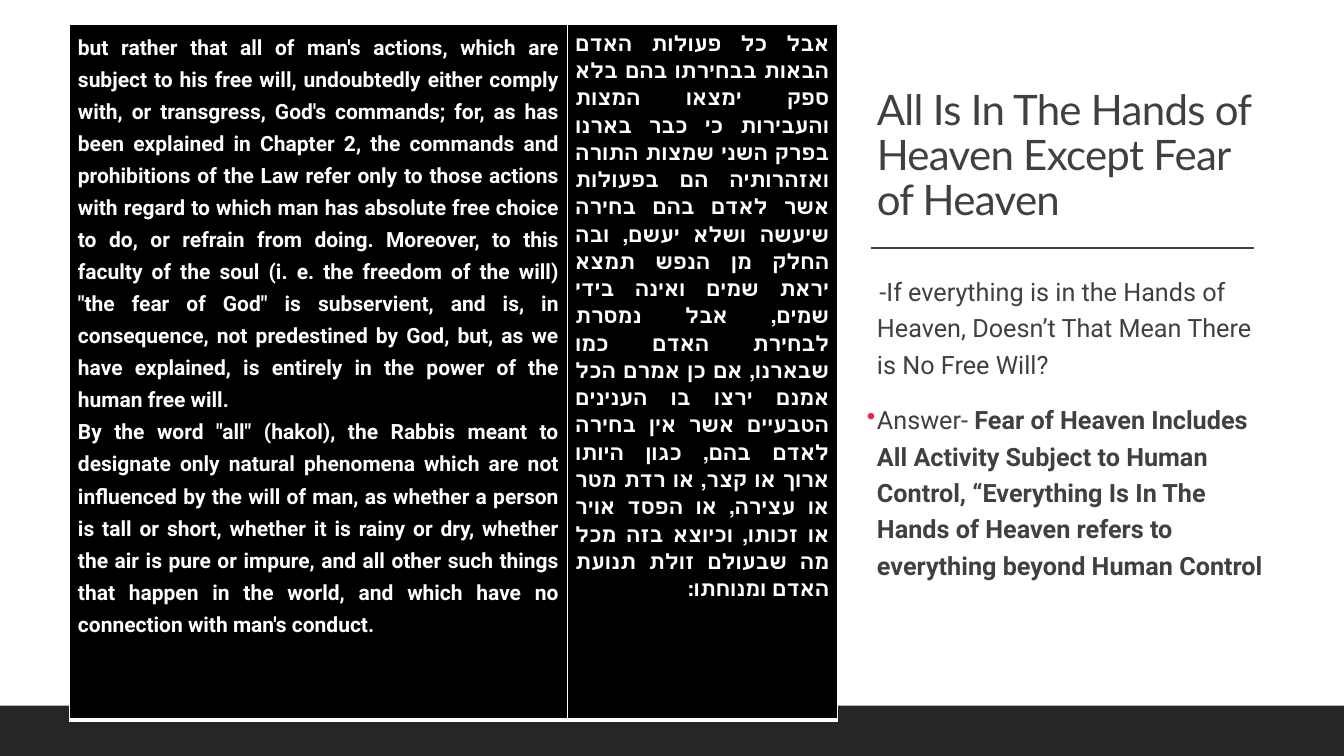
from lxml.etree import SubElement
from pptx import Presentation
from pptx.dml.color import RGBColor
from pptx.enum.shapes import MSO_CONNECTOR, MSO_SHAPE
from pptx.enum.text import MSO_ANCHOR, PP_ALIGN
from pptx.oxml.ns import qn
from pptx.util import Inches, Pt

WIDTH, HEIGHT = Inches(13.33), Inches(7.5)
WHITE, BLACK, GRAY, DARK, RED = "FFFFFF", "000000", "404040", "262626", "E72949"
TEXT_COL, TEXT_COLS = 64.5, 30.3

TITLE = "All Is In The Hands of Heaven Except Fear of Heaven"
QUESTION = "-If everything is in the Hands of Heaven, Doesn’t That Mean There is No Free Will?"
ANSWER = (
    "Fear of Heaven Includes All Activity Subject to Human Control, “Everything Is In The "
    "Hands of Heaven refers to everything beyond Human Control"
)
ENGLISH = [
    "but rather that all of man's actions, which are subject to his free will, undoubtedly "
    "either comply with, or transgress, God's commands; for, as has been explained in Chapter 2, "
    "the commands and prohibitions of the Law refer only to those actions with regard to which "
    "man has absolute free choice to do, or refrain from doing. Moreover, to this faculty of the "
    "soul (i. e. the freedom of the will) \"the fear of God\" is subservient, and is, in "
    "consequence, not predestined by God, but, as we have explained, is entirely in the power of "
    "the human free will. ",
    "By the word \"all\" (hakol), the Rabbis meant to designate only natural phenomena which are "
    "not influenced by the will of man, as whether a person is tall or short, whether it is rainy "
    "or dry, whether the air is pure or impure, and all other such things that happen in the "
    "world, and which have no connection with man's conduct.",
]
HEBREW = [
    "אבל כל פעולות האדם הבאות בבחירתו בהם בלא ספק ימצאו המצות והעבירות כי כבר בארנו בפרק השני "
    "שמצות התורה ואזהרותיה הם בפעולות אשר לאדם בהם בחירה שיעשה ושלא יעשם, ובה החלק מן הנפש תמצא "
    "יראת שמים ואינה בידי שמים, אבל נמסרת לבחירת האדם כמו שבארנו, אם כן אמרם הכל אמנם ירצו בו "
    "הענינים הטבעיים אשר אין בחירה לאדם בהם, כגון היותו ארוך או קצר, או רדת מטר או עצירה, או "
    "הפסד אויר או זכותו, וכיוצא בזה מכל מה שבעולם זולת תנועת האדם ומנוחתו:",
]


def rgb(color):
    return RGBColor.from_string(color)


def x(cols):
    return round(WIDTH * cols / 100)


def y(rows):
    return round(HEIGHT * rows / 100)


def add_band(s, row, rows, color):
    sp = s.shapes.add_shape(MSO_SHAPE.RECTANGLE, 0, y(row), WIDTH, y(rows))
    sp.shadow.inherit = False
    sp.fill.solid()
    sp.fill.fore_color.rgb = rgb(color)
    sp.line.fill.background()


def add_rule(s, col, row, cols):
    line = s.shapes.add_connector(MSO_CONNECTOR.STRAIGHT, x(col), y(row), x(col + cols), y(row))
    line.line.color.rgb = rgb(GRAY)
    line.line.width = Pt(1)
    SubElement(line._element.spPr, qn("a:effectLst"))


def add_text_frame(s, row, rows, anchor):
    tf = s.shapes.add_textbox(x(TEXT_COL), y(row), x(TEXT_COLS), y(rows)).text_frame
    tf.word_wrap = True
    tf.vertical_anchor = anchor
    return tf


def add_run(p, text, font, size, color, bold=False):
    r = p.add_run()
    r.text = text
    r.font.name = font
    r.font.size = Pt(size)
    r.font.color.rgb = rgb(color)
    r.font.bold = bold
    return r


def next_paragraph(tf, index):
    return tf.add_paragraph() if index else tf.paragraphs[0]


def set_bullet(p, char):
    pPr = p._p.get_or_add_pPr()
    pPr.set("marL", str(Inches(0.1)))
    pPr.set("indent", str(-Inches(0.1)))
    SubElement(SubElement(pPr, qn("a:buClr")), qn("a:srgbClr"), val=RED)
    SubElement(pPr, qn("a:buChar"), char=char)


def add_title(s):
    p = add_text_frame(s, 9.2, 21.2, MSO_ANCHOR.BOTTOM).paragraphs[0]
    p.line_spacing = 0.9
    r = add_run(p, TITLE, "Lato", 30, GRAY)
    r.font._element.set("spc", "-50")


def add_body(s):
    tf = add_text_frame(s, 35.1, 50.5, MSO_ANCHOR.TOP)
    tf.margin_left = tf.margin_right = 0
    points = [(" ", [(QUESTION, False)]), ("•", [("Answer- ", False), (ANSWER, True)])]
    for i, (char, runs) in enumerate(points):
        p = next_paragraph(tf, i)
        p.line_spacing = 1.2
        p.space_before, p.space_after = Pt(12), Pt(2)
        set_bullet(p, char)
        for text, bold in runs:
            add_run(p, text, "Roboto", 18, GRAY, bold)


def set_borders(cell):
    tcPr = cell._tc.get_or_add_tcPr()
    for side, width in (("L", 1), ("R", 1), ("T", 1), ("B", 3)):
        ln = SubElement(tcPr, qn(f"a:ln{side}"), w=str(Pt(width)))
        SubElement(SubElement(ln, qn("a:solidFill")), qn("a:srgbClr"), val=WHITE)


def fill_cell(cell, texts, rtl):
    set_borders(cell)
    cell.fill.solid()
    cell.fill.fore_color.rgb = rgb(BLACK)
    cell.margin_left = cell.margin_right = Inches(0.08)
    cell.margin_top = cell.margin_bottom = Inches(0.04)
    for i, text in enumerate(texts):
        p = next_paragraph(cell.text_frame, i)
        p.alignment = PP_ALIGN.JUSTIFY
        p.line_spacing = 1.3
        if rtl:
            p._p.get_or_add_pPr().set("rtl", "1")
        add_run(p, text, "Roboto", 15, WHITE, True)


def add_passages(s, col, row, col_widths, rows):
    frame = s.shapes.add_table(1, 2, x(col), y(row), x(sum(col_widths)), y(rows))
    table = frame.table
    for column, cols in zip(table.columns, col_widths):
        column.width = x(cols)
    fill_cell(table.cell(0, 0), ENGLISH, False)
    fill_cell(table.cell(0, 1), HEBREW, True)


def main():
    prs = Presentation()
    prs.slide_width, prs.slide_height = WIDTH, HEIGHT
    s = prs.slides.add_slide(prs.slide_layouts[6])
    add_band(s, 0, 100, WHITE)
    add_title(s)
    add_rule(s, 64.8, 32.8, 28.5)
    add_body(s)
    add_band(s, 93.33, 6.67, DARK)
    add_passages(s, 5.2, 3.2, (37, 20.1), 86.4)
    prs.save("out.pptx")


if __name__ == "__main__":
    main()
